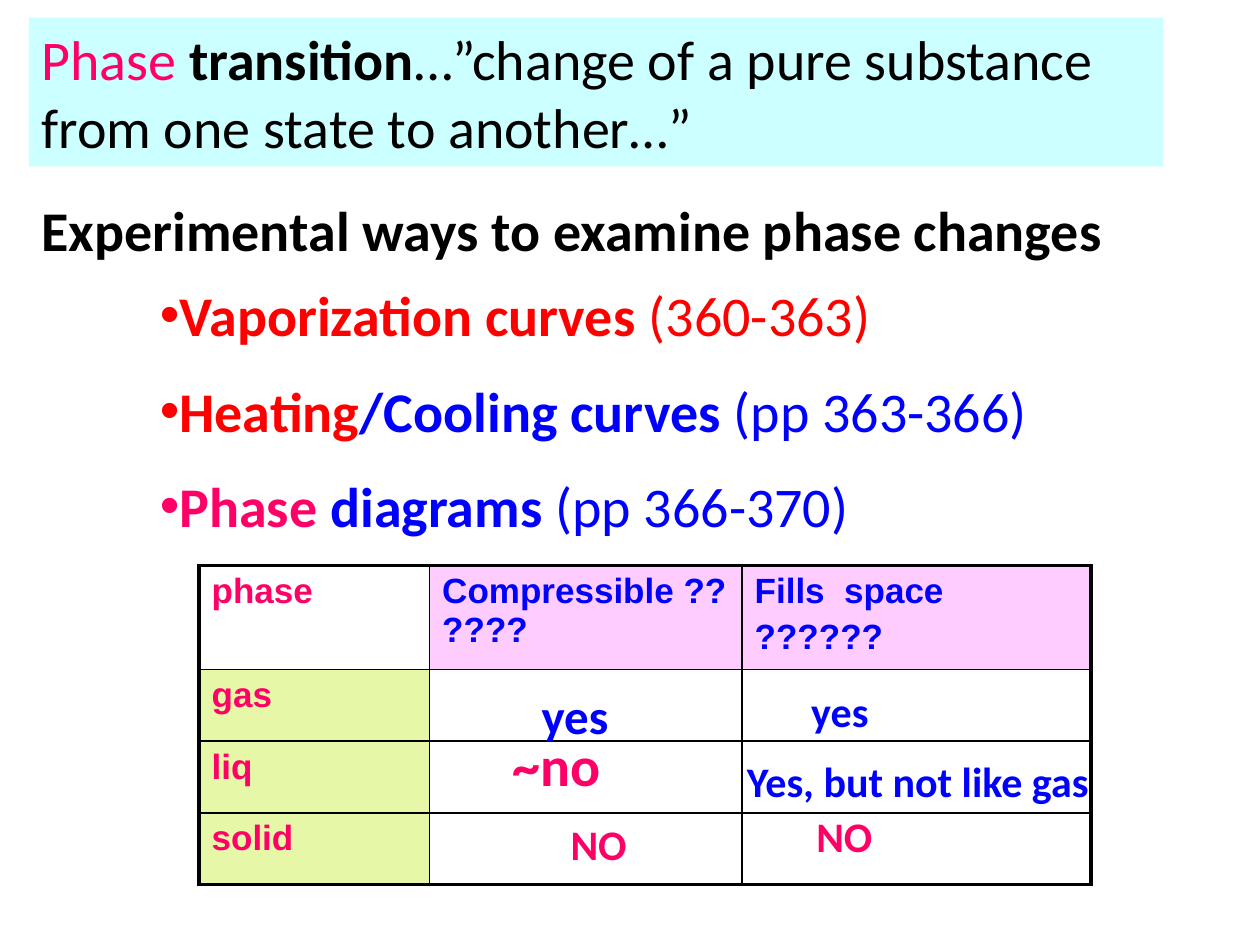
from lxml import etree
from pptx import Presentation
from pptx import util as u
from pptx.dml.color import RGBColor
from pptx.enum import shapes, text
from pptx.oxml import ns

RED, PINK, BLUE, BLACK = "FF0000", "FF0066", "0000FF", "000000"
LILAC, LIME, AQUA = "FFCCFF", "E6F7A7", "CCFFFF"


def color(hex_code):
    return RGBColor.from_string(hex_code)


def write(frame, lines, size, font="Calibri", gap=0):
    """Each line is a list of (words, colour, bold) runs."""
    frame.word_wrap = True
    for i, line in enumerate(lines):
        para = frame.paragraphs[0] if i == 0 else frame.add_paragraph()
        para.alignment = text.PP_ALIGN.LEFT
        if i:
            para.space_before = u.Pt(gap)
        for words, hex_code, bold in line:
            run = para.add_run()
            run.text = words
            run.font.name = font
            run.font.size = u.Pt(size)
            run.font.bold = bold
            run.font.color.rgb = color(hex_code)


prs = Presentation()
prs.slide_width, prs.slide_height = u.Inches(10), u.Inches(7.5)
slide = prs.slides.add_slide(prs.slide_layouts[6])

# Methods list
methods = slide.shapes.add_textbox(
    u.Inches(1.17), u.Inches(2.18), u.Inches(7.83), u.Inches(2.26)).text_frame
write(methods, [
    [("Vaporization curves ", RED, True), ("(360-363)", RED, False)],
    [("Heating", RED, True), ("/Cooling curves ", BLUE, True),
     ("(pp 363-366)", BLUE, False)],
    [("Phase ", PINK, True), ("diagrams ", BLUE, True),
     ("(pp 366-370)", BLUE, False)],
], 32, gap=16)
for para in methods.paragraphs:
    props = para._p.get_or_add_pPr()
    etree.SubElement(props, ns.qn("a:buFont"), typeface="Arial")
    etree.SubElement(props, ns.qn("a:buChar"), char="•")

# Definition banner
banner = slide.shapes.add_shape(
    shapes.MSO_SHAPE.RECTANGLE,
    u.Inches(0.23), u.Inches(0.14), u.Inches(9), u.Inches(1.18))
banner.shadow.inherit = False
banner.fill.solid()
banner.fill.fore_color.rgb = color(AQUA)
banner.line.fill.background()
write(banner.text_frame, [[
    ("Phase ", PINK, False), ("transition", BLACK, True),
    ("…”change of a pure substance from one state to another…”", BLACK, False),
]], 32)

# Phase properties table
phases = slide.shapes.add_table(
    4, 3, u.Inches(1.58), u.Inches(4.49), u.Inches(7.08), u.Inches(2.53)).table
for column, width in zip(phases.columns, (1.83, 2.48, 2.77)):
    column.width = u.Inches(width)
for row, height in zip(phases.rows, (0.82, 0.57, 0.57, 0.57)):
    row.height = u.Inches(height)

labels = {
    (0, 0): (["phase"], PINK, None),
    (0, 1): (["Compressible ??????"], BLUE, LILAC),
    (0, 2): (["Fills  space", "??????"], BLUE, LILAC),
    (1, 0): (["gas"], PINK, LIME),
    (2, 0): (["liq"], PINK, LIME),
    (3, 0): (["solid"], PINK, LIME),
}
for r in range(4):
    for c in range(3):
        cell = phases.cell(r, c)
        words, ink, fill = labels.get((r, c), ([], BLACK, None))
        if words:
            write(cell.text_frame, [[(w, ink, True)] for w in words],
                  20, "Arial", gap=4)
        # Thick outer frame, thin inner grid
        cell_props = cell._tc.get_or_add_tcPr()
        for side, outer in (("lnL", c == 0), ("lnR", c == 2),
                            ("lnT", r == 0), ("lnB", r == 3)):
            border = etree.SubElement(cell_props, ns.qn("a:" + side),
                                      w=str(u.Pt(2.25 if outer else 1)))
            stroke = etree.SubElement(border, ns.qn("a:solidFill"))
            etree.SubElement(stroke, ns.qn("a:srgbClr"), val=BLACK)
        if fill:
            cell.fill.solid()
            cell.fill.fore_color.rgb = color(fill)
        else:
            cell.fill.background()

# Answers over the table, then the subheading
for words, left, top, width, height, size, ink in (
    ("yes", 4.2, 5.39, 1.42, 0.57, 28, BLUE),
    ("yes", 6.34, 5.39, 1.17, 0.5, 24, BLUE),
    ("~no", 3.97, 5.75, 0.92, 0.64, 32, PINK),
    ("Yes, but not like gas", 5.83, 5.95, 3.17, 0.5, 24, BLUE),
    ("NO", 4.43, 6.45, 0.92, 0.5, 24, PINK),
    ("NO", 6.38, 6.38, 0.92, 0.5, 24, PINK),
    ("Experimental ways to examine phase changes",
     0.23, 1.5, 9.32, 0.64, 32, BLACK),
):
    answer = slide.shapes.add_textbox(
        u.Inches(left), u.Inches(top), u.Inches(width), u.Inches(height))
    write(answer.text_frame, [[(words, ink, True)]], size)

prs.save("out.pptx")
